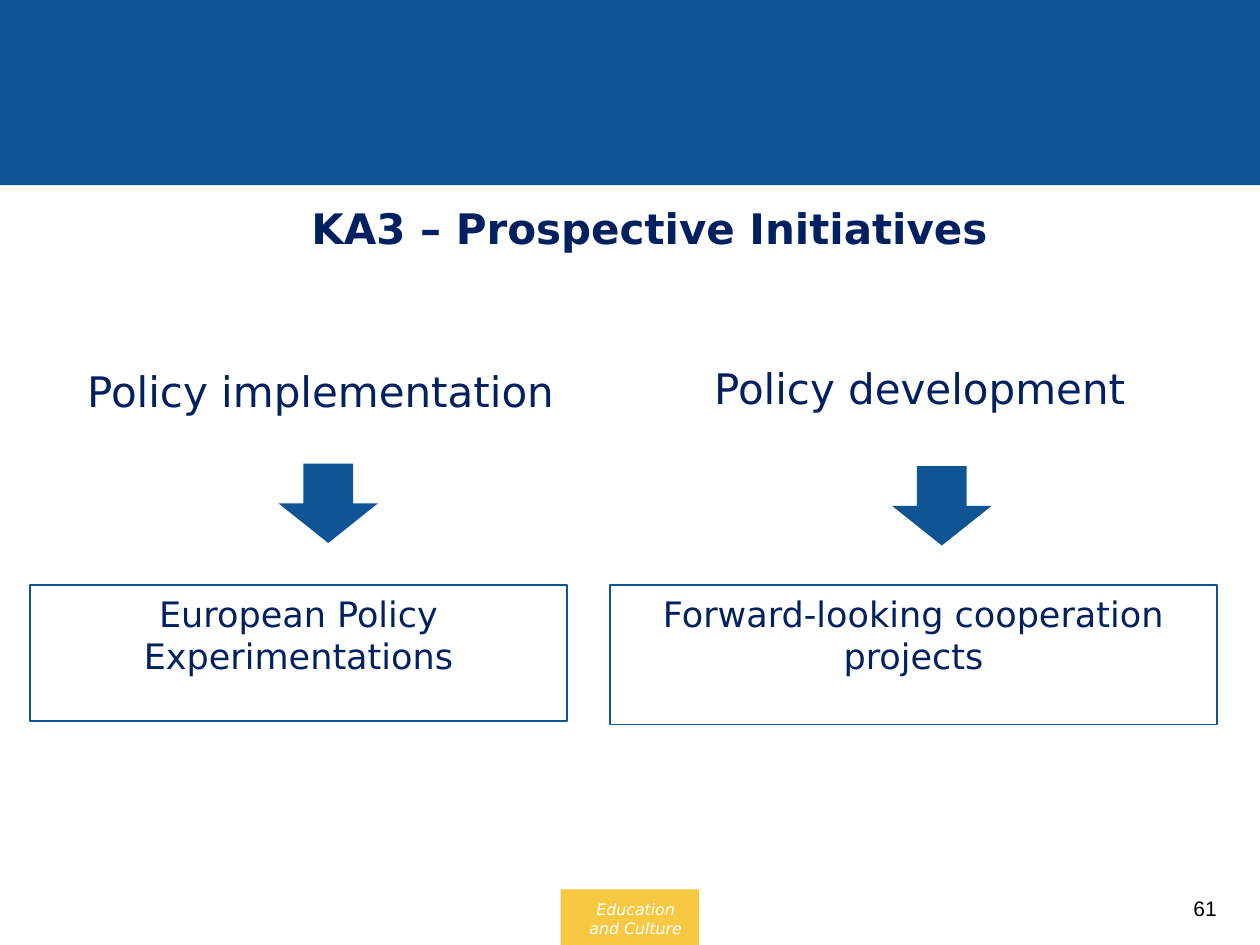
"""Build the slide on KA3 prospective initiatives."""
from dataclasses import dataclass

from pptx import Presentation
from pptx.dml.color import RGBColor
from pptx.enum import shapes, text
from pptx.util import Inches, Pt

BLUE = RGBColor(0x0F, 0x54, 0x94)
NAVY = RGBColor(0x00, 0x20, 0x60)
YELLOW = RGBColor(0xF7, 0xC9, 0x43)
WHITE = RGBColor(0xFF, 0xFF, 0xFF)
BLACK = RGBColor(0x00, 0x00, 0x00)
SANS = "DejaVu Sans"
PADDING = (0.1, 0.06)


@dataclass(frozen=True)
class Box:
    left: float
    top: float
    width: float
    height: float

    def lengths(self) -> tuple:
        return tuple(Inches(v) for v in (self.left, self.top, self.width, self.height))


@dataclass(frozen=True)
class Strand:
    heading: str
    heading_box: Box
    arrow_box: Box
    action: str
    action_box: Box


STRANDS = (
    Strand("Policy implementation", Box(0.24, 2.84, 4.61, 0.66),
           Box(2.21, 3.68, 0.79, 0.63),
           "European Policy Experimentations", Box(0.24, 4.64, 4.26, 1.08)),
    Strand("Policy development", Box(5.21, 2.82, 4.18, 0.7),
           Box(7.08, 3.7, 0.79, 0.63),
           "Forward-looking cooperation projects", Box(4.84, 4.64, 4.82, 1.11)),
)


def write(holder, wording: str, size: float, color: RGBColor = NAVY, font: str = SANS,
          bold: bool = False, italic: bool = False, padding: tuple = PADDING) -> None:
    frame = holder.text_frame
    frame.word_wrap = True
    frame.auto_size = text.MSO_AUTO_SIZE.NONE
    frame.vertical_anchor = text.MSO_ANCHOR.TOP
    frame.margin_left = frame.margin_right = Inches(padding[0])
    frame.margin_top = frame.margin_bottom = Inches(padding[1])
    paragraph = frame.paragraphs[0]
    paragraph.alignment = text.PP_ALIGN.CENTER
    run = paragraph.add_run()
    run.text = wording
    run.font.name = font
    run.font.size = Pt(size)
    run.font.bold = bold
    run.font.italic = italic
    run.font.color.rgb = color


def add_label(slide, box: Box, wording: str, size: float, **style) -> None:
    write(slide.shapes.add_textbox(*box.lengths()), wording, size, **style)


def add_filled(slide, preset: shapes.MSO_SHAPE, box: Box, color: RGBColor) -> None:
    block = slide.shapes.add_shape(preset, *box.lengths())
    block.shadow.inherit = False
    block.fill.solid()
    block.fill.fore_color.rgb = color
    block.line.fill.background()


def add_outlined(slide, box: Box, wording: str) -> None:
    frame = slide.shapes.add_shape(shapes.MSO_SHAPE.RECTANGLE, *box.lengths())
    frame.shadow.inherit = False
    frame.fill.background()
    frame.line.color.rgb = BLUE
    frame.line.width = Pt(1)
    write(frame, wording, 20)


def add_strand(slide, strand: Strand) -> None:
    add_label(slide, strand.heading_box, strand.heading, 24)
    add_filled(slide, shapes.MSO_SHAPE.DOWN_ARROW, strand.arrow_box, BLUE)
    add_outlined(slide, strand.action_box, strand.action)


def main() -> None:
    deck = Presentation()
    deck.slide_width, deck.slide_height = Inches(10), Inches(7.5)
    slide = deck.slides.add_slide(deck.slide_layouts[5])

    title = slide.shapes.title
    title.left, title.top, title.width, title.height = Box(1.14, 1.55, 8.03, 0.66).lengths()
    write(title, "KA3 – Prospective Initiatives", 24, bold=True)

    add_filled(slide, shapes.MSO_SHAPE.RECTANGLE, Box(0, 0, 10, 1.47), BLUE)
    add_filled(slide, shapes.MSO_SHAPE.RECTANGLE, Box(4.45, 7.06, 1.1, 0.44), YELLOW)
    add_label(slide, Box(4.61, 7.14, 0.87, 0.3), "Education and Culture", 9,
              color=WHITE, italic=True, padding=(0, 0))
    for strand in STRANDS:
        add_strand(slide, strand)
    add_label(slide, Box(9.25, 7.06, 0.63, 0.3), "61", 12,
              color=BLACK, font="Arial", padding=(0.1, 0.05))

    deck.save("out.pptx")


if __name__ == "__main__":
    main()
